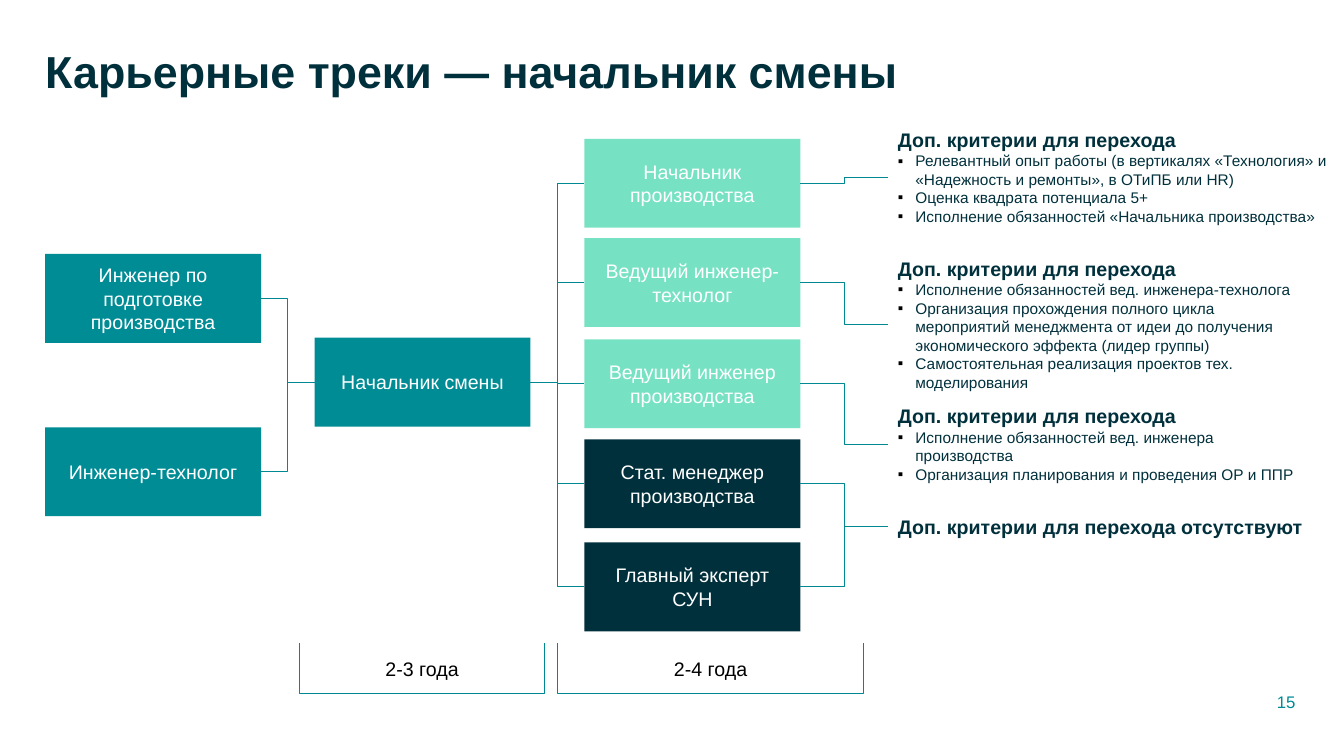
from dataclasses import dataclass

from lxml import etree
from pptx import Presentation
from pptx.dml.color import RGBColor
from pptx.enum.shapes import MSO_CONNECTOR as Connector, MSO_SHAPE as Shape
from pptx.enum.text import MSO_ANCHOR as Anchor, MSO_AUTO_SIZE as AutoSize, PP_ALIGN as Align
from pptx.oxml.ns import qn
from pptx.util import Cm, Pt


@dataclass(frozen=True)
class Theme:
    font: str = "Arial"
    dark: RGBColor = RGBColor(0x00, 0x30, 0x3C)
    teal: RGBColor = RGBColor(0x00, 0x8C, 0x95)
    mint: RGBColor = RGBColor(0x77, 0xE2, 0xC3)
    line: RGBColor = RGBColor(0x00, 0x89, 0x92)
    white: RGBColor = RGBColor(0xFF, 0xFF, 0xFF)
    black: RGBColor = RGBColor(0x00, 0x00, 0x00)
    title_size: Pt = Pt(32)
    body_size: Pt = Pt(14)
    bullet_size: Pt = Pt(11)
    number_size: Pt = Pt(12)
    line_width: Pt = Pt(0.75)


theme = Theme()


def style(paragraph, size, color, bold=False, align=Align.LEFT):
    paragraph.alignment = align
    font = paragraph.font
    font.name, font.size, font.bold = theme.font, size, bold
    font.color.rgb = color


def link(source, target):
    """Elbow from the right side of source to the left side of target."""
    elbow = slide.shapes.add_connector(Connector.ELBOW, 0, 0, 0, 0)
    elbow.begin_connect(source, 3)
    elbow.end_connect(target, 1)
    elbow.line.color.rgb = theme.line
    elbow.line.width = theme.line_width
    etree.SubElement(elbow._element.spPr, qn("a:effectLst"))


prs = Presentation()
prs.slide_width, prs.slide_height = Cm(33.87), Cm(19.05)
slide = prs.slides.add_slide(prs.slide_layouts[5])

# Title
title = slide.shapes.title
title.left, title.top, title.width, title.height = Cm(1.14), Cm(1.12), Cm(27.36), Cm(2.82)
title_frame = title.text_frame
title_frame.text = "Карьерные треки — начальник смены"
title_frame.auto_size = AutoSize.NONE
title_frame.vertical_anchor = Anchor.TOP
title_frame.margin_left = 0
title_frame.paragraphs[0].line_spacing = 0.9
style(title_frame.paragraphs[0], theme.title_size, theme.dark, bold=True)

# Positions: column left, top, fill, wording
START, CURRENT, NEXT = 1.14, 7.93, 14.73
POSITIONS = [
    (START, 6.4, theme.teal, "Инженер по подготовке производства"),
    (START, 10.77, theme.teal, "Инженер-технолог"),
    (CURRENT, 8.51, theme.teal, "Начальник смены"),
    (NEXT, 3.5, theme.mint, "Начальник производства"),
    (NEXT, 6.0, theme.mint, "Ведущий инженер-технолог"),
    (NEXT, 8.55, theme.mint, "Ведущий инженер производства"),
    (NEXT, 11.07, theme.dark, "Стат. менеджер производства"),
    (NEXT, 13.67, theme.dark, "Главный эксперт СУН"),
]
positions = []
for left, top, fill, wording in POSITIONS:
    position = slide.shapes.add_shape(Shape.RECTANGLE, Cm(left), Cm(top), Cm(5.44), Cm(2.24))
    position.shadow.inherit = False
    position.fill.solid()
    position.fill.fore_color.rgb = fill
    position.line.fill.background()
    position.text_frame.text = wording
    position.text_frame.word_wrap = True
    position.text_frame.vertical_anchor = Anchor.MIDDLE
    style(position.text_frame.paragraphs[0], theme.body_size, theme.white, align=Align.CENTER)
    positions.append(position)
entry_roles, shift_head, next_roles = positions[:2], positions[2], positions[3:]

# Transition criteria: top, width, height, heading, bullets
HEADING = "Доп. критерии для перехода"
CRITERIA = [
    (3.1, 11.56, 2.74, HEADING, [
        "Релевантный опыт работы (в вертикалях «Технология» и «Надежность и ремонты», в ОТиПБ или HR)",
        "Оценка квадрата потенциала 5+",
        "Исполнение обязанностей «Начальника производства»",
    ]),
    (6.35, 10.82, 3.68, HEADING, [
        "Исполнение обязанностей вед. инженера-технолога",
        "Организация прохождения полного цикла мероприятий менеджмента от идеи "
        "до получения экономического эффекта (лидер группы)",
        "Самостоятельная реализация проектов тех. моделирования",
    ]),
    (10.06, 10.82, 2.26, HEADING, [
        "Исполнение обязанностей вед. инженера производства",
        "Организация планирования и проведения ОР и ППР",
    ]),
    (12.85, 10.82, 0.86, HEADING + " отсутствуют", []),
]
criteria = []
for top, width, height, heading, bullets in CRITERIA:
    block = slide.shapes.add_textbox(Cm(22.38), Cm(top), Cm(width), Cm(height))
    block.text_frame.word_wrap = True
    block.text_frame.text = heading
    style(block.text_frame.paragraphs[0], theme.body_size, theme.dark, bold=True)
    for wording in bullets:
        item = block.text_frame.add_paragraph()
        item.text = wording
        props = item._p.get_or_add_pPr()
        props.set("marL", str(Cm(0.44)))
        props.set("indent", str(-Cm(0.44)))
        bullet_color = etree.SubElement(props, qn("a:buClr"))
        etree.SubElement(bullet_color, qn("a:srgbClr"), val=str(theme.black))
        etree.SubElement(props, qn("a:buFont"), typeface=theme.font)
        etree.SubElement(props, qn("a:buChar"), char="▪")
        style(item, theme.bullet_size, theme.dark)
    criteria.append(block)

# Career links; the last two roles share one criteria block
for role in entry_roles:
    link(role, shift_head)
for role, block in zip(next_roles, criteria + criteria[-1:]):
    link(shift_head, role)
    link(role, block)

# Durations: centre and span of each bracket
DEPTH = 1.27
for center, span, duration in [(10.64, 6.17, "2-3 года"), (17.91, 7.7, "2-4 года")]:
    bracket = slide.shapes.add_shape(
        Shape.LEFT_BRACKET, Cm(center - DEPTH / 2), Cm(16.85 - span / 2), Cm(DEPTH), Cm(span))
    bracket.rotation = 270
    bracket.adjustments[0] = 0
    bracket.shadow.inherit = False
    bracket.fill.background()
    bracket.line.color.rgb = theme.line
    bracket.line.width = theme.line_width
    label = slide.shapes.add_textbox(Cm(center - 1.2), Cm(16.43), Cm(2.4), Cm(0.86))
    label.text_frame.word_wrap = False
    label.text_frame.text = duration
    style(label.text_frame.paragraphs[0], theme.body_size, theme.black, align=Align.CENTER)

# Slide number
number = slide.shapes.add_textbox(Cm(31.55), Cm(17.42), Cm(1.35), Cm(0.52))
number.text_frame.word_wrap = True
number.text_frame.vertical_anchor = Anchor.MIDDLE
number.text_frame.text = "15"
style(number.text_frame.paragraphs[0], theme.number_size, theme.teal, align=Align.RIGHT)

prs.save("out.pptx")
